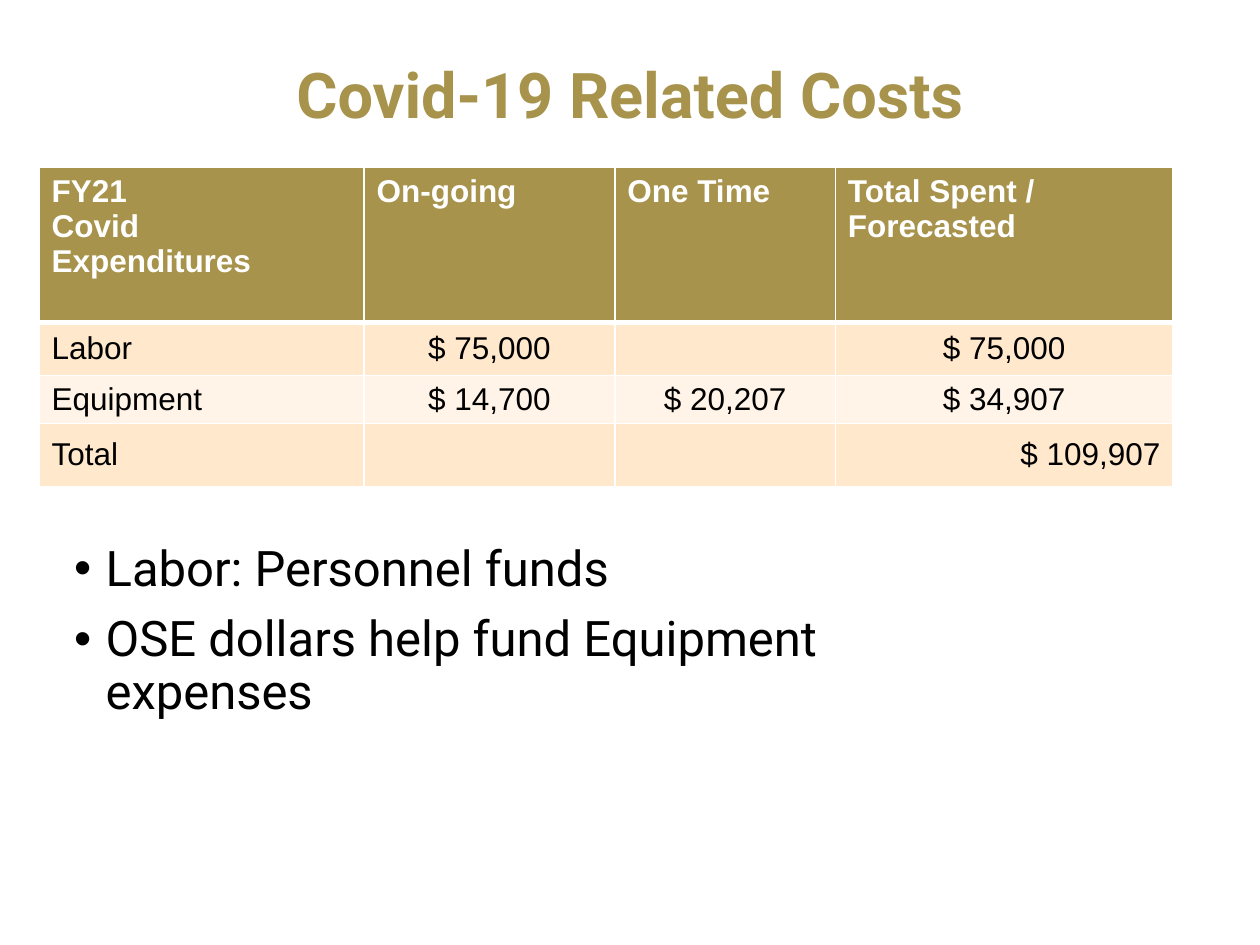
from lxml.etree import SubElement
from pptx import Presentation
from pptx.dml.color import RGBColor
from pptx.enum.text import MSO_ANCHOR, PP_ALIGN
from pptx.oxml.ns import qn
from pptx.util import Inches, Pt

GOLD = RGBColor(0xA7, 0x93, 0x4B)
PEACH = RGBColor(0xFF, 0xE8, 0xCC)
CREAM = RGBColor(0xFF, 0xF4, 0xE7)
WHITE = RGBColor(0xFF, 0xFF, 0xFF)
BLACK = RGBColor(0, 0, 0)

# Grid of square units covering the slide
COLUMNS, ROWS = 100, 75


class CostSlide:
    """Holds the text styles and the slide being built."""

    heading = {"name": "Roboto", "size": Pt(36), "bold": True}
    body = {"name": "Roboto", "size": Pt(28), "bold": False}
    header_cell = {"name": "Arial", "size": Pt(18), "bold": True}
    data_cell = {"name": "Arial", "size": Pt(18), "bold": False}

    def __init__(self, deck):
        self.column = deck.slide_width / COLUMNS
        self.row = deck.slide_height / ROWS
        self.slide = deck.slides.add_slide(deck.slide_layouts[5])

    def area(self, left, top, width, height):
        return (round(left * self.column), round(top * self.row),
                round(width * self.column), round(height * self.row))

    def format_text(self, paragraph, style, color, **layout):
        for key, value in layout.items():
            setattr(paragraph, key, value)
        for key, value in style.items():
            setattr(paragraph.font, key, value)
        paragraph.font.color.rgb = color

    def title(self, text, area):
        title = self.slide.shapes.title
        for key, value in zip(("left", "top", "width", "height"), self.area(*area)):
            setattr(title, key, value)
        title.text_frame.text = text
        title.text_frame.vertical_anchor = MSO_ANCHOR.MIDDLE
        self.format_text(title.text_frame.paragraphs[0], self.heading, GOLD,
                         alignment=PP_ALIGN.CENTER, line_spacing=0.9)

    def borders(self, cell, bottom_width):
        properties = cell._tc.get_or_add_tcPr()
        widths = {"a:lnL": 1, "a:lnR": 1, "a:lnT": 1, "a:lnB": bottom_width}
        for position, (tag, width) in enumerate(widths.items()):
            line = SubElement(properties, qn(tag), w=str(Pt(width)))
            fill = SubElement(line, qn("a:solidFill"))
            SubElement(fill, qn("a:srgbClr"), val=str(WHITE))
            properties.insert(position, line)

    def table(self, records, alignments, area, widths, heights):
        table = self.slide.shapes.add_table(
            len(records), len(widths), *self.area(*area)).table
        for column, width in zip(table.columns, widths):
            column.width = round(width * self.column)
        for row, height in zip(table.rows, heights):
            row.height = round(height * self.row)

        for r, (record, row_alignments) in enumerate(zip(records, alignments)):
            is_header = r == 0
            fill = GOLD if is_header else (PEACH if r % 2 else CREAM)
            for c, (text, alignment) in enumerate(zip(record, row_alignments)):
                cell = table.cell(r, c)
                cell.text = text
                cell.vertical_anchor = MSO_ANCHOR.TOP if is_header else MSO_ANCHOR.MIDDLE
                cell.fill.solid()
                cell.fill.fore_color.rgb = fill
                self.borders(cell, 3 if is_header else 1)
                for paragraph in cell.text_frame.paragraphs:
                    self.format_text(
                        paragraph,
                        self.header_cell if is_header else self.data_cell,
                        WHITE if is_header else BLACK, alignment=alignment)

    def bullets(self, points, area):
        frame = self.slide.shapes.add_textbox(*self.area(*area)).text_frame
        frame.word_wrap = True
        for i, point in enumerate(points):
            paragraph = frame.add_paragraph() if i else frame.paragraphs[0]
            paragraph.text = point
            properties = paragraph._p.get_or_add_pPr()
            properties.set("marL", str(Inches(0.25)))
            properties.set("indent", str(-Inches(0.25)))
            SubElement(properties, qn("a:buFont"), typeface="Arial")
            SubElement(properties, qn("a:buChar"), char="•")
            self.format_text(paragraph, self.body, BLACK, line_spacing=0.9,
                             space_before=Pt(10 if i else 0))


def main():
    deck = Presentation()
    deck.slide_width, deck.slide_height = Inches(10), Inches(7.5)
    costs = CostSlide(deck)

    # Heading
    costs.title("Covid-19 Related Costs", (3.1, 2.2, 93.8, 11.1))

    # Expenditure table
    left, center, right = PP_ALIGN.LEFT, PP_ALIGN.CENTER, PP_ALIGN.RIGHT
    amounts = (left, center, center, center)
    costs.table(
        records=[
            ("FY21\nCovid \vExpenditures", "On-going", "One Time",
             "Total Spent / Forecasted"),
            ("Labor", "$ 75,000", "", "$ 75,000"),
            ("Equipment", "$ 14,700", "$ 20,207", "$ 34,907"),
            ("Total", "", "", "$ 109,907"),
        ],
        alignments=[(left,) * 4, amounts, amounts, (left, center, center, right)],
        area=(3.1, 13.3, 90, 25.3),
        widths=(25.8, 19.9, 17.5, 26.8),
        heights=(12.3, 4.2, 3.8, 5),
    )

    # Funding notes
    costs.bullets(["Labor: Personnel funds",
                   "OSE dollars help fund Equipment expenses"],
                  (4.9, 42.7, 72.8, 13.6))

    deck.save("out.pptx")


if __name__ == "__main__":
    main()
